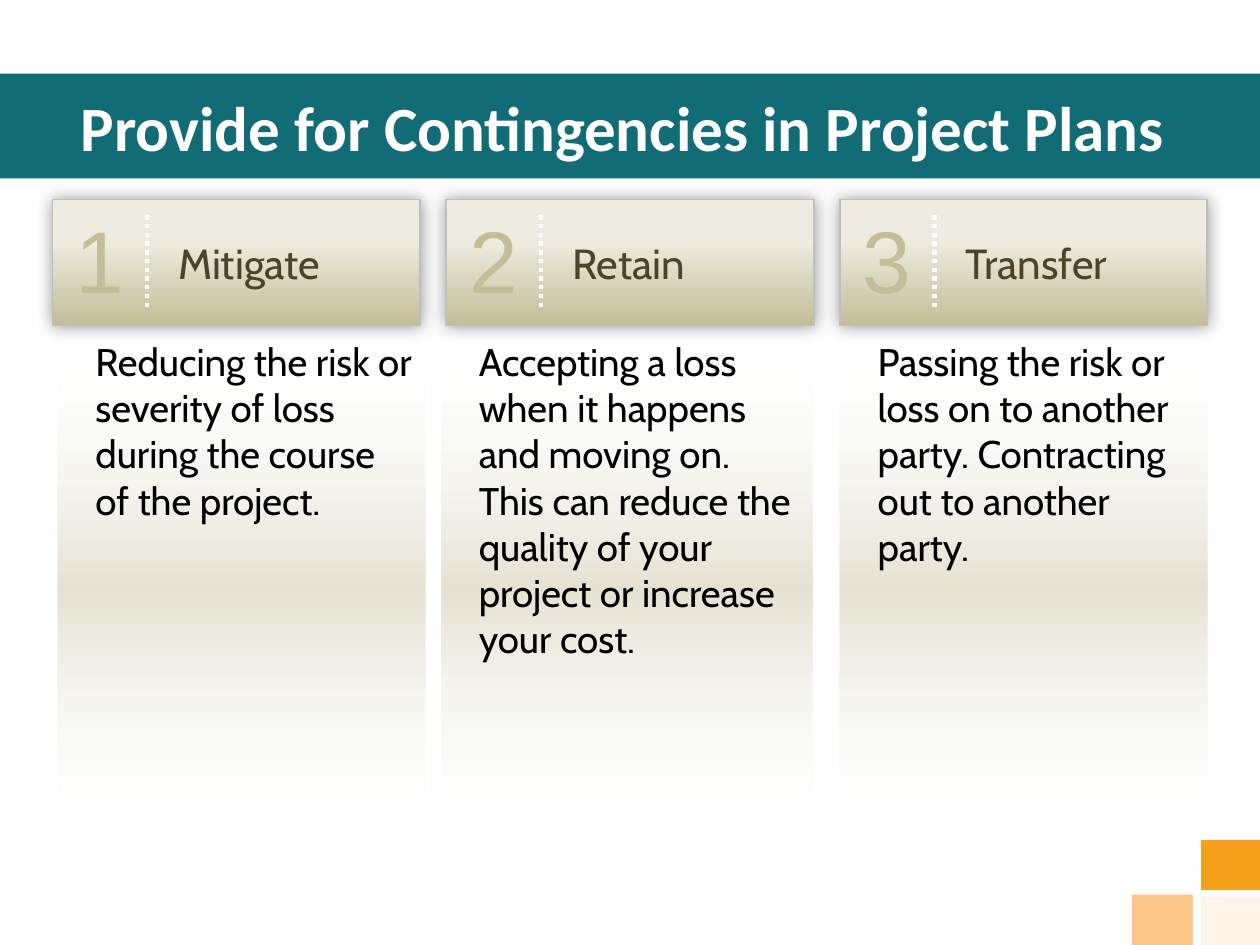
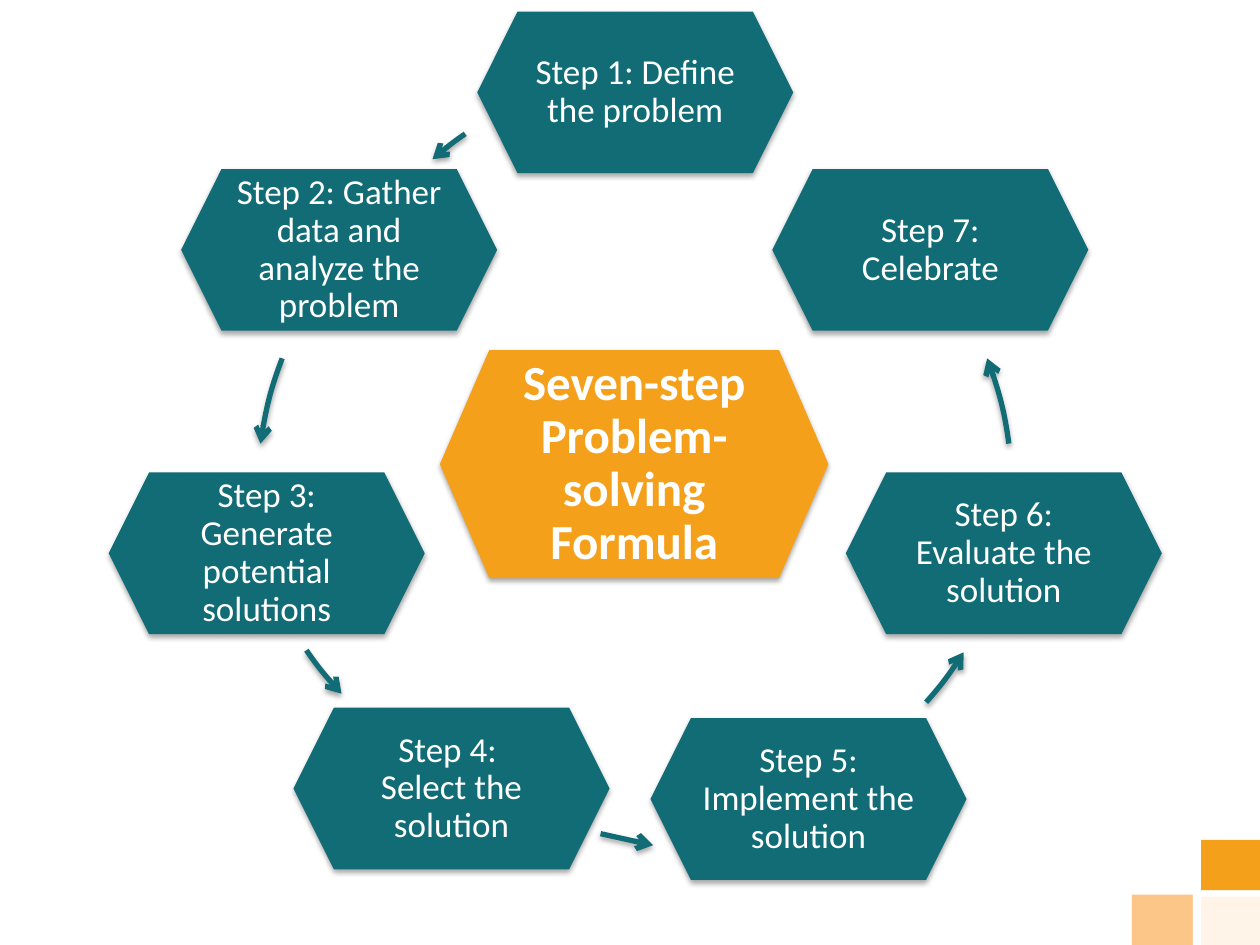
from lxml import etree
from pptx import Presentation
from pptx.dml.color import RGBColor
from pptx.enum.dml import MSO_LINE
from pptx.enum.shapes import MSO_CONNECTOR, MSO_SHAPE
from pptx.enum.text import MSO_ANCHOR, PP_ALIGN
from pptx.oxml.ns import qn
from pptx.util import Inches, Pt

RECT, ARC = MSO_SHAPE.RECTANGLE, MSO_SHAPE.ARC
STRAIGHT = MSO_CONNECTOR.STRAIGHT
DOTS = MSO_LINE.ROUND_DOT
TOP, MIDDLE = MSO_ANCHOR.TOP, MSO_ANCHOR.MIDDLE
LEFT, CENTER = PP_ALIGN.LEFT, PP_ALIGN.CENTER

WIDE, HIGH = Inches(10), Inches(7.5)
UNIT = WIDE / 120

COLORS = {
    "teal": "116C76", "orange": "F5A01A", "peach": "FDC689", "cream": "FFF4E7",
    "white": "FFFFFF", "black": "000000", "sand": "DDD9C3", "ivory": "EEECE1",
    "khaki": "C4BD97", "olive": "4A452A", "gray": "BFBFBF",
}

CORNER = [
    ((114.4, 85.3, 5.6, 4.7), "cream"),
    ((114.4, 80, 5.6, 4.8), "orange"),
    ((107.8, 85.2, 6, 4.8), "peach"),
    ((114.4, 84.8, 5.6, 0.6), "white"),
    ((113.6, 84.8, 0.6, 5.2), "white"),
]

PLANS = [
    ("Mitigate", 5.5, 35,
     "Reducing the risk or severity of loss during the course of the project."),
    ("Retain", 42, 35.4,
     "Accepting a loss when it happens and moving on. This can reduce the "
     "quality of your project or increase your cost."),
    ("Transfer", 80, 35,
     "Passing the risk or loss on to another party. Contracting out to "
     "another party."),
]

STEPS = [
    ("Step 1: Define the problem", 60.5, 8.8),
    ("Step 2: Gather data and analyze the problem", 32.3, 23.8),
    ("Step 3: Generate potential solutions", 25.4, 52.7),
    ("Step 4: \vSelect the solution", 43, 75.1),
    ("Step 5: Implement the solution", 77, 76.1),
    ("Step 6: Evaluate the solution", 95.6, 52.7),
    ("Step 7: Celebrate", 88.6, 23.8),
]

ARCS = [
    (64.7, 42.3, 229.1, 235.4),
    (60.4, 47, 187.6, 201),
    (58.7, 41.5, 136.8, 145.3),
    (61.4, 43, 32.2, 41.7),
    (60.5, 47, 339, 352.4),
]
RADIUS = 35.9


def color(name):
    return RGBColor.from_string(COLORS[name])


def grid(*nums):
    return [round(num * UNIT) for num in nums]


def add_node(parent, tag, **attrs):
    node = etree.SubElement(parent, qn(tag))
    for key, value in attrs.items():
        node.set(key, str(value))
    return node


def tint(parent, name, alpha=100):
    node = add_node(parent, "a:srgbClr", val=COLORS[name])
    if alpha < 100:
        add_node(node, "a:alpha", val=alpha * 1000)


def cast(effects, blur, drop, alpha):
    shade = add_node(effects, "a:outerShdw", blurRad=Pt(blur), dist=Pt(drop),
                     dir=5400000, algn="ctr", rotWithShape=0)
    tint(shade, "black", alpha)


def shadow(shape, blur=3.1, drop=1.8, alpha=35):
    shape.shadow.inherit = False
    cast(shape._element.spPr.find(qn("a:effectLst")), blur, drop, alpha)


def blend(shape, stops):
    shape.fill.gradient()
    fill = shape._element.spPr.find(qn("a:gradFill"))
    for child in list(fill):
        fill.remove(child)
    items = add_node(fill, "a:gsLst")
    for place, name, alpha in stops:
        tint(add_node(items, "a:gs", pos=place * 1000), name, alpha)
    add_node(fill, "a:lin", ang=5400000, scaled=0)


def paint(shape, name):
    shape.fill.solid()
    shape.fill.fore_color.rgb = color(name)
    shape.line.fill.background()


def add_rect(slide, box):
    shape = slide.shapes.add_shape(RECT, *grid(*box))
    shape.shadow.inherit = False
    shape.line.fill.background()
    return shape


def write(shape, text, size, font, name, align=LEFT, anchor=MIDDLE,
          pads=(0.1, 0.05, 0.1, 0.05), bold=False):
    frame = shape.text_frame
    frame.text = text
    frame.word_wrap = True
    frame.vertical_anchor = anchor
    (frame.margin_left, frame.margin_top,
     frame.margin_right, frame.margin_bottom) = map(Inches, pads)
    para = frame.paragraphs[0]
    para.alignment = align
    for run in para.runs:
        run.font.size = Pt(size)
        run.font.name = font
        run.font.bold = bold
        run.font.color.rgb = color(name)
    return para


def stroke(shape, name, width):
    shape.line.color.rgb = color(name)
    shape.line.width = Pt(width)
    return shape.line


def add_line(slide, ends, name, width):
    line = slide.shapes.add_connector(STRAIGHT, *grid(*ends))
    stroke(line, name, width)
    return line


def add_corner(slide):
    for box, name in CORNER:
        paint(add_rect(slide, box), name)


def add_title(slide, text):
    title = slide.shapes.title
    title.left, title.top, title.width, title.height = grid(0, 7, 120, 10)
    paint(title, "teal")
    write(title, text, 36, "Calibri", "white", CENTER, bold=True)


def add_body(slide, box, text):
    body = add_rect(slide, box)
    blend(body, [(0, "white", 0), (50, "sand", 75), (100, "white", 0)])
    write(body, text, 22, "Cabin", "black", anchor=TOP,
          pads=(0.3, 0.1, 0.1, 0.05))


def add_head(slide, box, num, text):
    left, top, wide, high = box
    head = add_rect(slide, box)
    blend(head, [(32, "ivory", 100), (100, "khaki", 100)])
    stroke(head, "gray", 1)
    shadow(head, 10, 0, 40)
    write(head, text, 24, "Cabin", "olive", pads=(1, 0.05, 0.1, 0.05))
    mark = slide.shapes.add_textbox(*grid(left, top, 9, high - 0.7))
    write(mark, str(num), 50, "Arial", "khaki", CENTER, TOP)
    rule = add_line(slide, (left + 9, top + 1.5, left + 9, top + high - 1.5),
                    "white", 2.5)
    rule.line.dash_style = DOTS
    add_node(rule._element.spPr, "a:effectLst")


def add_hex(slide, mid, size, notch, name, text, points, bold=False):
    (x, y), (wide, high) = mid, size
    left, right = x - wide / 2, x + wide / 2
    top, low = y - high / 2, y + high / 2
    path_pts = [(left + notch, top), (right - notch, top), (right, y),
                (right - notch, low), (left + notch, low)]
    maker = slide.shapes.build_freeform(*grid(left, y))
    maker.add_line_segments([grid(*spot) for spot in path_pts], close=True)
    shape = maker.convert_to_shape()
    paint(shape, name)
    shadow(shape)
    para = write(shape, text, points, "Calibri", "white", CENTER,
                 pads=(0.4, 0.24, 0.4, 0.24), bold=bold)
    para.line_spacing = 0.9


def add_arc(slide, x, y, start, stop):
    box = grid(x - RADIUS, y - RADIUS, 2 * RADIUS, 2 * RADIUS)
    arc = slide.shapes.add_shape(ARC, *box)
    arc.adjustments[0] = start * 0.6
    arc.adjustments[1] = stop * 0.6
    arc.fill.background()
    line = stroke(arc, "teal", 3)
    add_node(line._get_or_add_ln(), "a:headEnd", type="arrow")
    shadow(arc)


def plan_slide(deck):
    slide = deck.slides.add_slide(deck.slide_layouts[5])
    add_corner(slide)
    add_title(slide, "Provide for Contingencies in Project Plans ")
    for _, left, wide, text in PLANS:
        add_body(slide, (left, 31, wide, 50), text)
    for i, plan in enumerate(PLANS):
        add_head(slide, (5 + 37.5 * i, 19, 35, 12), i + 1, plan[0])


def step_slide(deck):
    slide = deck.slides.add_slide(deck.slide_layouts[6])
    add_corner(slide)
    for text, x, y in STEPS:
        add_hex(slide, (x, y), (30.1, 15.4), 3.85, "teal", text, 20)
    for arc in ARCS:
        add_arc(slide, *arc)
    add_hex(slide, (60.4, 44.2), (37, 21.7), 4.7, "orange",
            "Seven-step Problem- solving Formula", 28, True)
    link = add_line(slide, (57.2, 79.4, 62.2, 80.5), "teal", 3)
    add_node(link.line._get_or_add_ln(), "a:tailEnd", type="arrow")
    cast(add_node(link._element.spPr, "a:effectLst"), 3.1, 1.8, 35)


def main():
    deck = Presentation()
    deck.slide_width, deck.slide_height = WIDE, HIGH
    plan_slide(deck)
    step_slide(deck)
    deck.save("out.pptx")


if __name__ == "__main__":
    main()
